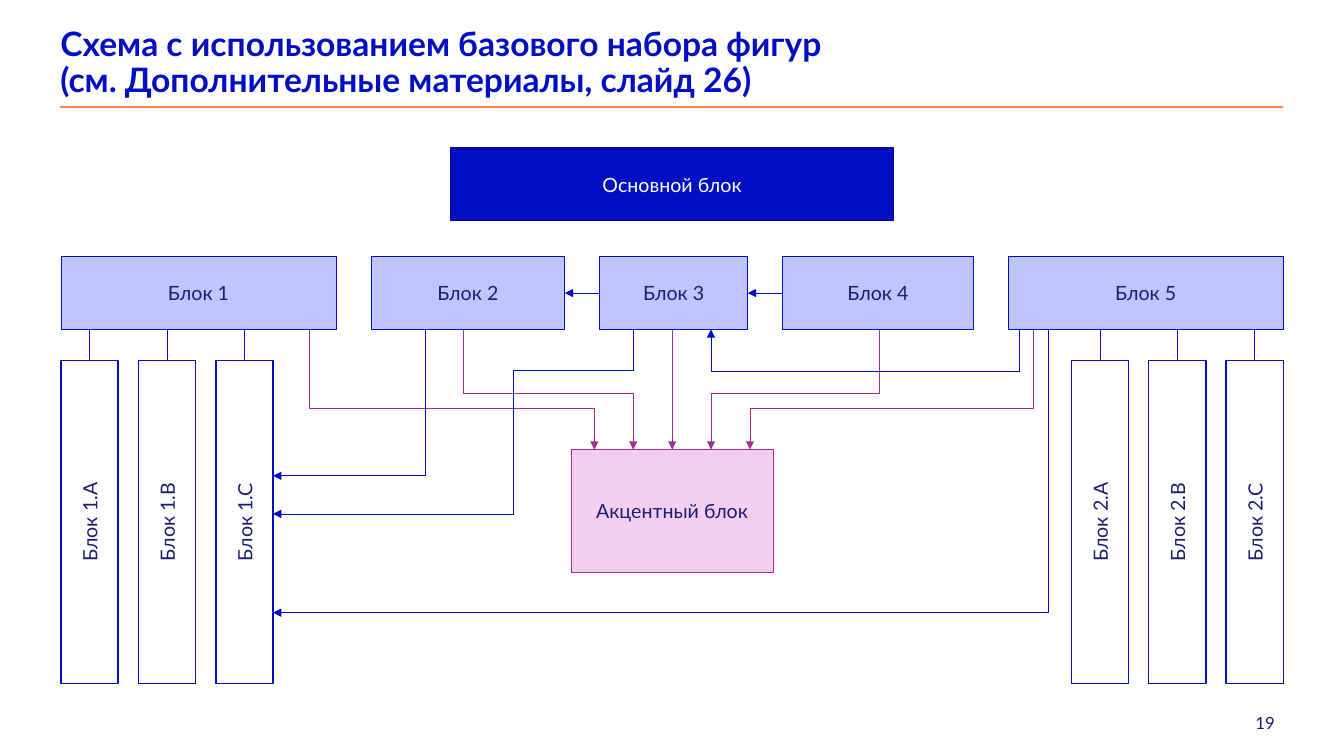
from copy import deepcopy
from pptx import Presentation
from pptx.dml.color import RGBColor
from pptx.enum.shapes import MSO_CONNECTOR, MSO_SHAPE
from pptx.enum.text import MSO_ANCHOR, MSO_AUTO_SIZE, PP_ALIGN
from pptx.oxml.ns import qn
from pptx.util import Cm, Pt
from lxml.etree import SubElement

HUES = {
    "blue": "000FC4", "navy": "000B91", "ink": "1A1E73", "page": "171B68",
    "pale": "C0C5FF", "plum": "A32B9B", "pink": "F2CFF0",
    "rule": "FF8151", "white": "FFFFFF",
}
FONT = "Lato"


def paint(hue):
    return RGBColor.from_string(HUES[hue])


def style(frame, size, hue, align, bold=False):
    for para in frame.paragraphs:
        para.alignment = align
        for run in para.runs:
            run.font.name = FONT
            run.font.size = Pt(size)
            run.font.bold = bold
            run.font.color.rgb = paint(hue)


def stroke(shape, hue, width, arrow=False):
    shape.line.color.rgb = paint(hue)
    shape.line.width = Pt(width)
    if arrow:
        SubElement(shape.line._get_or_add_ln(), qn("a:tailEnd"), type="triangle")


def add_block(slide, box, text, fill, edge, width=0.5, ink="ink", turn=0):
    left, top, wide, high = box
    if turn:
        left, top = left + (wide - high) / 2, top + (high - wide) / 2
        wide, high = high, wide
    block = slide.shapes.add_shape(
        MSO_SHAPE.RECTANGLE, Cm(left), Cm(top), Cm(wide), Cm(high))
    block.rotation = turn
    block.shadow.inherit = False
    block.fill.solid()
    block.fill.fore_color.rgb = paint(fill)
    stroke(block, edge, width)
    frame = block.text_frame
    frame.word_wrap = True
    frame.vertical_anchor = MSO_ANCHOR.MIDDLE
    frame.text = text
    style(frame, 14, ink, PP_ALIGN.CENTER)


def add_line(slide, start, end, hue, width=0.5, arrow=False):
    line = slide.shapes.add_connector(
        MSO_CONNECTOR.STRAIGHT, Cm(start[0]), Cm(start[1]), Cm(end[0]), Cm(end[1]))
    stroke(line, hue, width, arrow)
    SubElement(line._element.spPr, qn("a:effectLst"))


def add_route(slide, origin, points, hue):
    spots = [(Cm(origin[0] + x), Cm(origin[1] + y)) for x, y in points]
    maker = slide.shapes.build_freeform(*spots[0])
    maker.add_line_segments(spots[1:], close=False)
    route = maker.convert_to_shape()
    route.shadow.inherit = False
    route.fill.background()
    stroke(route, hue, 0.5, True)


def add_head(slide, box):
    left, top, wide, high = box
    title = slide.shapes.title
    title.left, title.top = Cm(left), Cm(top)
    title.width, title.height = Cm(26.7), Cm(high - 0.2)
    frame = title.text_frame
    frame.margin_left = frame.margin_right = 0
    frame.margin_top = frame.margin_bottom = 0
    frame.word_wrap = True
    frame.auto_size = MSO_AUTO_SIZE.NONE
    frame.vertical_anchor = MSO_ANCHOR.MIDDLE
    frame.text = ("Схема с использованием базового набора фигур \v"
                  "(см. Дополнительные материалы, слайд 26)")
    style(frame, 24, "blue", PP_ALIGN.LEFT, True)
    para = frame.paragraphs[0]
    para.line_spacing = 0.9
    for gap in para._p.findall(qn("a:br")):
        gap.insert(0, deepcopy(para.runs[0]._r.rPr))
    add_line(slide, (left, top + high), (left + wide, top + high), "rule", 1.25)


def add_bars(slide, box, group, floor):
    left, top, wide, high = box
    bar = 1.44
    step = (wide - bar) / 2
    for spot, mark in enumerate("АВС"):
        x = left + spot * step
        add_line(slide, (x + bar / 2, floor), (x + bar / 2, top), "blue")
        add_block(slide, (x, top, bar, high), f"Блок {group}.{mark}",
                  "white", "blue", 1, turn=270)


def add_row(slide, box):
    left, top, wide, high = box
    sizes = [6.93, 4.88, 3.73, 4.8, 6.93]
    gap = (wide - sum(sizes)) / (len(sizes) - 1)
    x = left
    for place, size in enumerate(sizes, 1):
        add_block(slide, (x, top, size, high), f"Блок {place}", "pale", "blue")
        if place in (3, 4):
            y = top + high / 2
            add_line(slide, (x, y), (x - gap, y), "blue", arrow=True)
        x += size + gap


def add_routes(slide, origin, mid, floor, goal, wall):
    tips = [mid + 0.98 * n for n in range(-2, 3)]
    add_line(slide, (origin[0] + mid, origin[1] + floor),
             (origin[0] + mid, origin[1] + goal), "plum", arrow=True)
    for start, bend, tip in [(6.25, 6.57, tips[0]), (10.13, 6.18, tips[1]),
                             (20.62, 6.18, tips[3]), (24.49, 6.57, tips[4])]:
        add_route(slide, origin, [(start, floor), (start, bend),
                                  (tip, bend), (tip, goal)], "plum")
    for start, bend in [(9.17, 8.26), (24.87, 11.71)]:
        add_route(slide, origin, [(start, floor), (start, bend),
                                  (wall, bend)], "blue")
    add_route(slide, origin, [(24.15, floor), (24.15, 5.63),
                              (tips[3], 5.63), (tips[3], floor)], "blue")
    add_route(slide, origin, [(tips[1], floor), (tips[1], 5.6), (11.4, 5.6),
                              (11.4, 9.22), (wall, 9.22)], "blue")


def add_scheme(slide, box):
    left, top, wide, high = box
    mid, tall, row = wide / 2, 1.83, 2.74
    floor, goal, bars, group = row + tall, 7.6, 5.35, 5.34
    add_block(slide, (left + mid - 5.58, top, 11.16, tall),
              "Основной блок", "blue", "navy", 1, "white")
    for mark, x in [(1, left), (2, left + wide - group)]:
        add_bars(slide, (x, top + bars, group, high - bars), mark, top + floor)
    add_block(slide, (left + mid - 2.54, top + goal, 5.08, 3.1),
              "Акцентный блок", "pink", "plum")
    add_routes(slide, (left, top), mid, floor, goal, group)
    add_row(slide, (left, top + row, wide, tall))


def add_page(slide, box):
    note = slide.shapes.add_textbox(*(Cm(part) for part in box))
    frame = note.text_frame
    frame.margin_left = frame.margin_right = 0
    frame.margin_top = frame.margin_bottom = 0
    frame.word_wrap = True
    frame.text = "19"
    style(frame, 12, "page", PP_ALIGN.RIGHT)


def main():
    deck = Presentation()
    deck.slide_width, deck.slide_height = Cm(33.87), Cm(19.05)
    slide = deck.slides.add_slide(deck.slide_layouts[5])
    add_head(slide, (1.52, 0.7, 30.81, 2))
    add_scheme(slide, (1.54, 3.73, 30.8, 13.5))
    add_page(slide, (26, 17.96, 6.13, 0.5))
    deck.save("out.pptx")


if __name__ == "__main__":
    main()
